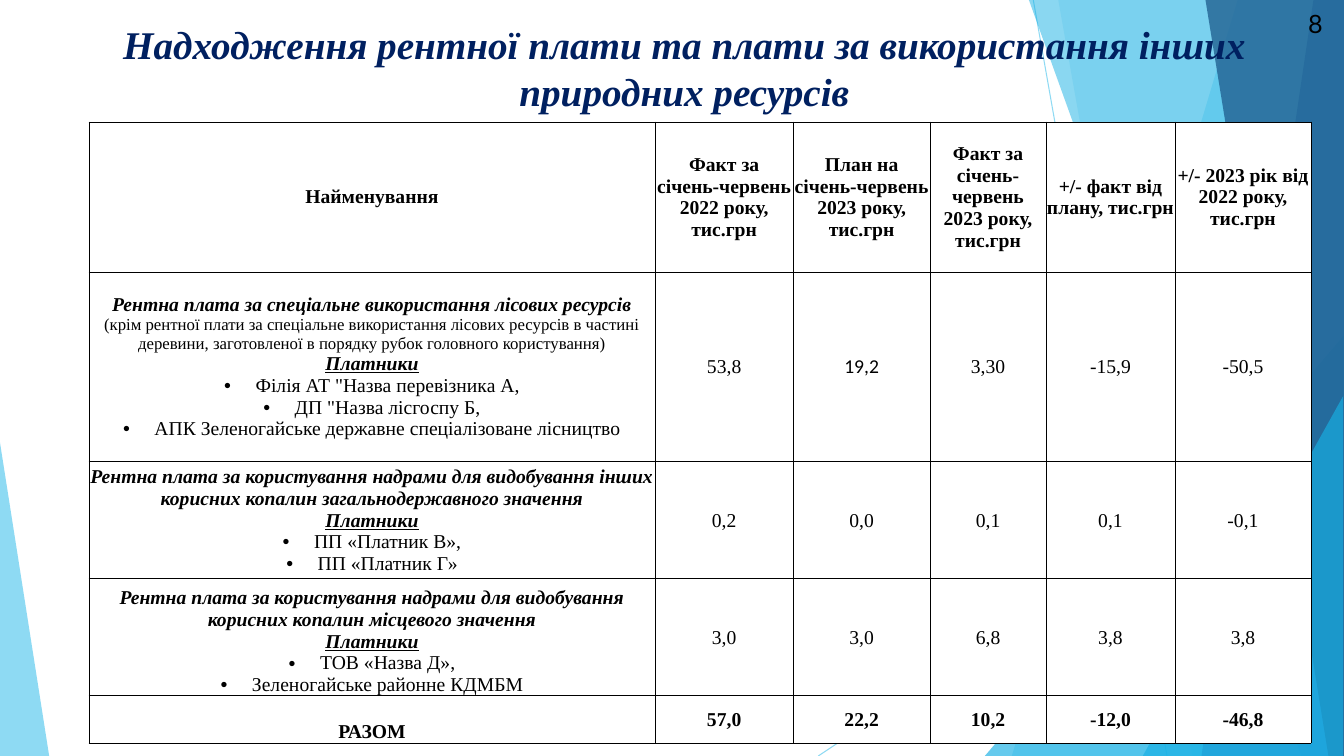
from lxml import etree
from pptx import Presentation
from pptx.dml.color import RGBColor
from pptx.enum.shapes import MSO_CONNECTOR, MSO_SHAPE
from pptx.enum.text import MSO_ANCHOR, PP_ALIGN
from pptx.oxml.ns import qn
from pptx.util import Cm, Pt

STRAIGHT, TRIANGLE = MSO_CONNECTOR.STRAIGHT, MSO_SHAPE.ISOSCELES_TRIANGLE
MIDDLE, BOTTOM, CENTER = MSO_ANCHOR.MIDDLE, MSO_ANCHOR.BOTTOM, PP_ALIGN.CENTER
SERIF = "Times New Roman"
WIDTH, HEIGHT = 33.87, 19.05

# Content
TITLE = "Надходження рентної плати та плати за використання інших природних ресурсів"
PAGE = "8"
HEADER = ["Найменування", "Факт за січень-червень 2022 року, тис.грн",
          "План на січень-червень 2023 року, тис.грн",
          "Факт за січень-червень 2023 року, тис.грн",
          "+/- факт від плану, тис.грн", "+/- 2023 рік від 2022 року, тис.грн"]
PAYERS = ("payers", "Платники")
ROWS = [
    ([("name", "Рентна плата за спеціальне використання лісових ресурсів"),
      ("note", "(крім рентної плати за спеціальне використання лісових ресурсів в частині "
               "деревини, заготовленої в порядку рубок головного користування)"),
      PAYERS,
      ("bullet", "Філія АТ \"Назва перевізника А,"),
      ("bullet", "ДП \"Назва лісгоспу Б,"),
      ("bullet", "АПК Зеленогайське державне спеціалізоване лісництво")],
     ["53,8", "19,2", "3,30", "-15,9", "-50,5"]),
    ([("name", "Рентна плата за користування надрами для видобування інших "
               "корисних копалин загальнодержавного значення"),
      PAYERS,
      ("bullet", "ПП «Платник В»,"),
      ("bullet", "ПП «Платник Г»")],
     ["0,2", "0,0", "0,1", "0,1", "-0,1"]),
    ([("name", "Рентна плата за користування надрами для видобування "
               "корисних копалин місцевого значення"),
      PAYERS,
      ("bullet", "ТОВ «Назва Д»,"),
      ("bullet", "Зеленогайське районне КДМБМ")],
     ["3,0", "3,0", "6,8", "3,8", "3,8"]),
]
TOTAL = ["РАЗОМ", "57,0", "22,2", "10,2", "-12,0", "-46,8"]

# Formats
BASE = {"size": Pt(14), "name": SERIF}
STYLES = {
    "bold": {**BASE, "bold": True},
    "plain": BASE,
    "bullet": BASE,
    "name": {**BASE, "bold": True, "italic": True},
    "payers": {**BASE, "bold": True, "italic": True, "underline": True},
    "note": {**BASE, "size": Pt(12)},
    "sans": {**BASE, "name": "Calibri"},
    "title": {"size": Pt(28), "name": SERIF, "bold": True, "italic": True},
    "page": {"size": Pt(18), "name": "Lato"},
}
COL_WIDTHS = [14.27, 3.48, 3.45, 2.92, 3.25, 3.43]
ROW_HEIGHTS = [3.78, 4.78, 2.95, 2.95, 1.19]

# Background: lines (x1, y1, x2, y2); bands (top x, bottom x); triangles (box, tip)
LINES = [(26.04, 0, 29.41, HEIGHT), (WIDTH, 10.24, 20.62, HEIGHT)]
SKY, BLUE = "5FCBEF", "17B0E4"
DECOR = [
    ("band", (31.19, 25.5), SKY, 36),
    ("band", (26.67, 30.05), SKY, 20),
    ("triangle", (24.82, 8.46, 9.04, 10.59, 1), BLUE, 66),
    ("band", (25.93, 32.79), BLUE, 50),
    ("band", (33.1, 30.28), "2E83C3", 70),
    ("band", (30.38, 33.48), "226292", 80),
    ("triangle", (28.8, 9.98, 5.05, 9.07, 1), BLUE, 66),
    ("triangle", (0, 11.15, 1.24, 7.9, 0), SKY, 70),
]


def rgb(code):
    return RGBColor.from_string(code)


def paint(fill, code, alpha=None):
    fill.solid()
    fill.fore_color.rgb = rgb(code)
    if alpha is not None:
        clr = fill._xPr.find(".//" + qn("a:srgbClr"))
        etree.SubElement(clr, qn("a:alpha"), val=str(alpha * 1000))


def write(p, text, style, color="000000"):
    r = p.add_run()
    r.text = text
    for key, value in STYLES[style].items():
        setattr(r.font, key, value)
    r.font.color.rgb = rgb(color)


def add_bullet(p):
    pPr = p._p.get_or_add_pPr()
    pPr.set("marL", str(Cm(0.79)))
    pPr.set("indent", str(-Cm(0.79)))
    etree.SubElement(pPr, qn("a:buFont"), typeface="Arial")
    etree.SubElement(pPr, qn("a:buChar"), char="•")


def add_borders(cell):
    tcPr = cell._tc.get_or_add_tcPr()
    for side in ("lnL", "lnR", "lnT", "lnB"):
        ln = etree.SubElement(tcPr, qn("a:" + side), w=str(Pt(0.5)))
        fill = etree.SubElement(ln, qn("a:solidFill"))
        etree.SubElement(fill, qn("a:srgbClr"), val="000000")


def fill_cell(cell, paragraphs, anchor):
    margins = {"margin_left": Cm(0.02), "margin_right": Cm(0.02),
               "margin_top": Cm(0.02), "margin_bottom": 0}
    for key, value in margins.items():
        setattr(cell, key, value)
    cell.vertical_anchor = anchor
    add_borders(cell)
    paint(cell.fill, "FFFFFF")
    tf = cell.text_frame
    for i, (style, text) in enumerate(paragraphs):
        p = tf.add_paragraph() if i else tf.paragraphs[0]
        p.alignment = CENTER
        if style == "bullet":
            add_bullet(p)
        write(p, text, style)


def add_background(s):
    for ends in LINES:
        line = s.shapes.add_connector(STRAIGHT, *map(Cm, ends))
        line.line.width = Pt(0.75)
        paint(line.line.fill, SKY, 70)
        etree.SubElement(line._element.spPr, qn("a:effectLst"))
    for kind, place, color, alpha in DECOR:
        if kind == "band":
            top, bottom = place
            outline = s.shapes.build_freeform(Cm(top), 0)
            corners = [(WIDTH, 0), (WIDTH, HEIGHT), (bottom, HEIGHT)]
            outline.add_line_segments([(Cm(x), Cm(y)) for x, y in corners])
            sp = outline.convert_to_shape()
        else:
            sp = s.shapes.add_shape(TRIANGLE, *map(Cm, place[:4]))
            sp.adjustments[0] = place[4]
        sp.shadow.inherit = False
        paint(sp.fill, color, alpha)
        sp.line.fill.background()


def add_revenue_table(s):
    grid = [[[("bold", text)] for text in HEADER]]
    grid += [[name] + [[("plain", v)] for v in values] for name, values in ROWS]
    grid.append([[("bold", text)] for text in TOTAL])
    grid[1][2] = [("sans", ROWS[0][1][1])]
    table = s.shapes.add_table(len(grid), len(HEADER), Cm(2.24), Cm(3.07),
                               Cm(sum(COL_WIDTHS)), Cm(sum(ROW_HEIGHTS))).table
    table.first_row = table.horz_banding = False
    for col, width in zip(table.columns, COL_WIDTHS):
        col.width = Cm(width)
    for row, height in zip(table.rows, ROW_HEIGHTS):
        row.height = Cm(height)
    for i, cells in enumerate(grid):
        for j, paragraphs in enumerate(cells):
            anchor = BOTTOM if j == 0 and i >= 3 else MIDDLE
            fill_cell(table.cell(i, j), paragraphs, anchor)


def main():
    prs = Presentation()
    prs.slide_width, prs.slide_height = Cm(WIDTH), Cm(HEIGHT)
    s = prs.slides.add_slide(prs.slide_layouts[5])
    add_background(s)

    # Title, raised above the background
    title = s.shapes.title
    s.shapes._spTree.append(title._element)
    title.left, title.top, title.width, title.height = map(Cm, (1.88, 0.33, 30.73, 2.72))
    title.text_frame.vertical_anchor = MIDDLE
    p = title.text_frame.paragraphs[0]
    p.alignment = CENTER
    write(p, TITLE, "title", "002060")

    add_revenue_table(s)

    # Page number
    tf = s.shapes.add_textbox(*map(Cm, (32.72, 0.08, 1.09, 1.02))).text_frame
    tf.word_wrap = True
    write(tf.paragraphs[0], PAGE, "page")
    prs.save("out.pptx")


if __name__ == "__main__":
    main()
